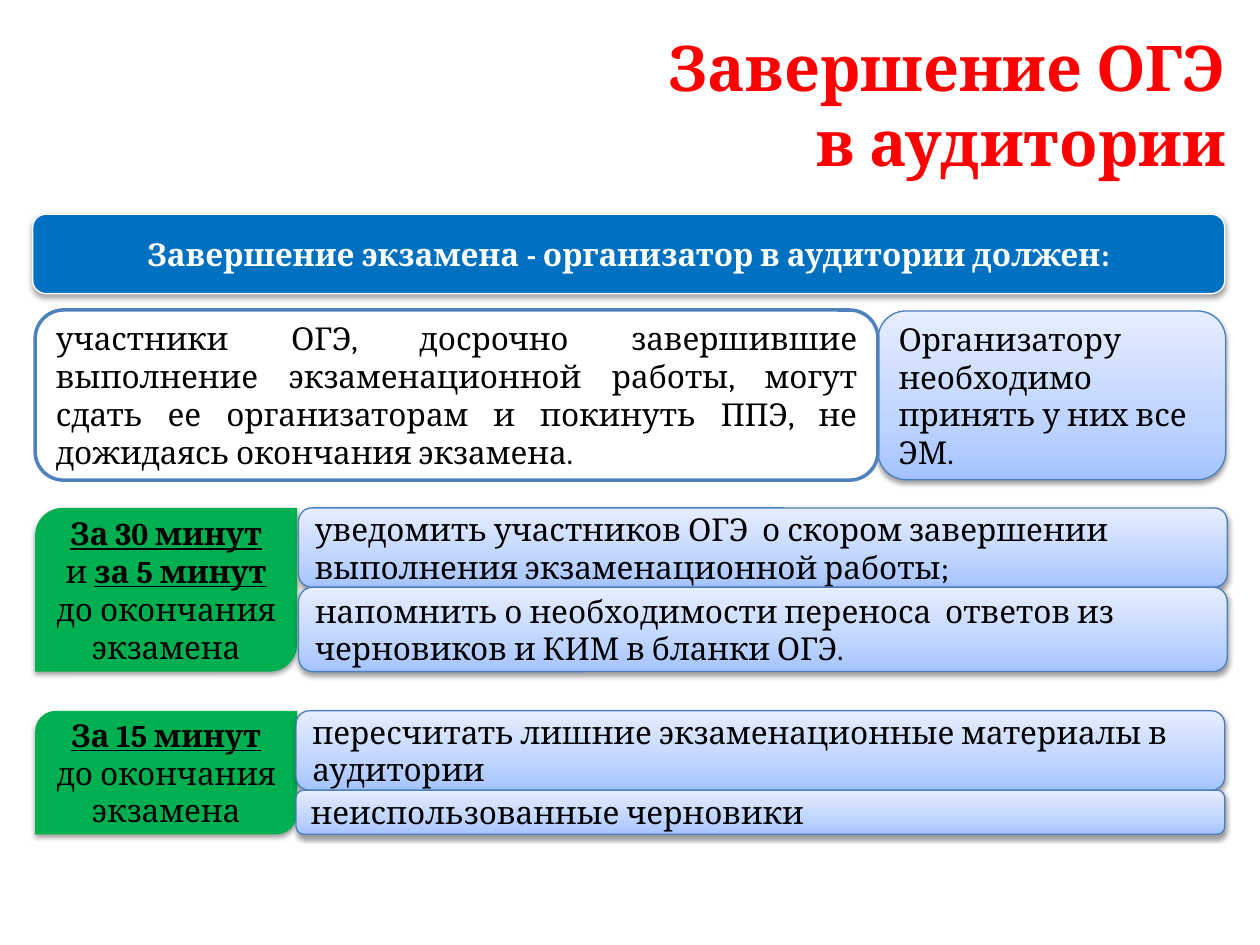
from copy import deepcopy
from lxml import etree
from pptx import Presentation
from pptx import util as u
from pptx.dml.color import RGBColor
from pptx.enum import shapes, text as t
from pptx.oxml.ns import qn

COLORS = {
    "title": "FF0000", "header": "0070C0", "time": "00B050", "white": "FFFFFF",
    "black": "000000", "outline": "4B7EBC", "frame": "4F81BD",
}
GRADIENT = [(0, "A4C4FF"), (0.35, "BFD4FF"), (1, "E6EEFF")]
ROUND = shapes.MSO_SHAPE.ROUNDED_RECTANGLE
DIAGONAL = shapes.MSO_SHAPE.ROUND_2_DIAG_RECTANGLE
ALIGN = t.PP_ALIGN


def write(box, lines, size=18, color="black", bold=False, align=ALIGN.LEFT):
    frame = box.text_frame
    frame.word_wrap = True
    frame.auto_size = t.MSO_AUTO_SIZE.NONE
    frame.vertical_anchor = t.MSO_ANCHOR.MIDDLE
    for number, line in enumerate(lines):
        para = frame.paragraphs[0] if number == 0 else frame.add_paragraph()
        para.alignment = align
        para.space_before = u.Pt(0)
        for index, piece in enumerate(line.split("*")):
            if piece:
                span = para.add_run()
                span.text = piece
                span.font.name = "Cambria"
                span.font.size = u.Pt(size)
                span.font.bold = bold or index % 2 == 1
                span.font.underline = index % 2 == 1
                span.font.color.rgb = RGBColor.from_string(COLORS[color])


def add_box(kind, place, fill=None, line=None, width=0.75, shadow=True):
    box = page.shapes.add_shape(kind, *[u.Cm(value) for value in place])
    box.shadow.inherit = False
    if fill:
        box.fill.solid()
        box.fill.fore_color.rgb = RGBColor.from_string(COLORS[fill])
    else:
        box.fill.gradient()
        box.fill.gradient_angle = 90
        stops = box._element.spPr.find(".//" + qn("a:gsLst"))
        stops.append(deepcopy(stops[-1]))
        for stop, (position, color) in zip(box.fill.gradient_stops, GRADIENT):
            stop.position = position
            stop.color.rgb = RGBColor.from_string(color)
    if line:
        box.line.color.rgb = RGBColor.from_string(COLORS[line])
        box.line.width = u.Pt(width)
    else:
        box.line.fill.background()
    if shadow:
        effects = box._element.spPr.find(qn("a:effectLst"))
        outer = etree.SubElement(effects, qn("a:outerShdw"), blurRad=str(u.Pt(3.1)),
                                 dist=str(u.Pt(1.6)), dir="5400000", rotWithShape="0")
        tint = etree.SubElement(outer, qn("a:srgbClr"), val=COLORS["black"])
        etree.SubElement(tint, qn("a:alpha"), val="38000")
    return box


deck = Presentation()
deck.slide_width, deck.slide_height = u.Cm(25.4), u.Cm(19.05)
page = deck.slides.add_slide(deck.slide_layouts[5])

title = page.shapes.title
title.left, title.top, title.width, title.height = [u.Cm(v) for v in (2.9, 0.5, 22.07, 3.18)]
write(title, ["Завершение ОГЭ", "в аудитории"], size=36, color="title", bold=True,
      align=ALIGN.RIGHT)

header = add_box(ROUND, (0.66, 4.32, 24.03, 1.6), fill="header", line="white")
write(header, ["Завершение экзамена - организатор в аудитории должен:"],
      color="white", bold=True, align=ALIGN.CENTER)

times = [
    (10.24, 3.3, ["*За 30 минут*", "и *за 5 минут *до окончания экзамена"]),
    (14.33, 2.49, ["*За 15 минут *до окончания экзамена"]),
]
for top, height, lines in times:
    box = add_box(DIAGONAL, (0.71, top, 5.28, height), fill="time")
    write(box, lines, align=ALIGN.CENTER)

actions = [
    (6.02, 10.24, 18.72, 1.6,
     "уведомить участников ОГЭ  о скором завершении выполнения экзаменационной работы;"),
    (17.7, 6.27, 7.01, 3.4, "Организатору необходимо принять у них все ЭМ."),
    (5.97, 14.33, 18.72, 1.6, "пересчитать лишние экзаменационные материалы в аудитории"),
    (5.97, 15.93, 18.72, 0.89, "неиспользованные черновики"),
    (6.02, 11.84, 18.72, 1.7,
     "напомнить о необходимости переноса  ответов из черновиков и КИМ в бланки ОГЭ."),
]
for *place, line in actions:
    write(add_box(ROUND, place, line="outline"), [line])

early = add_box(ROUND, (0.71, 6.25, 16.99, 3.43), fill="white", line="frame", width=2,
                shadow=False)
write(early, ["участники ОГЭ, досрочно завершившие выполнение экзаменационной работы, "
              "могут сдать ее организаторам и покинуть ППЭ, не дожидаясь окончания экзамена."],
      align=ALIGN.JUSTIFY)

deck.save("out.pptx")
